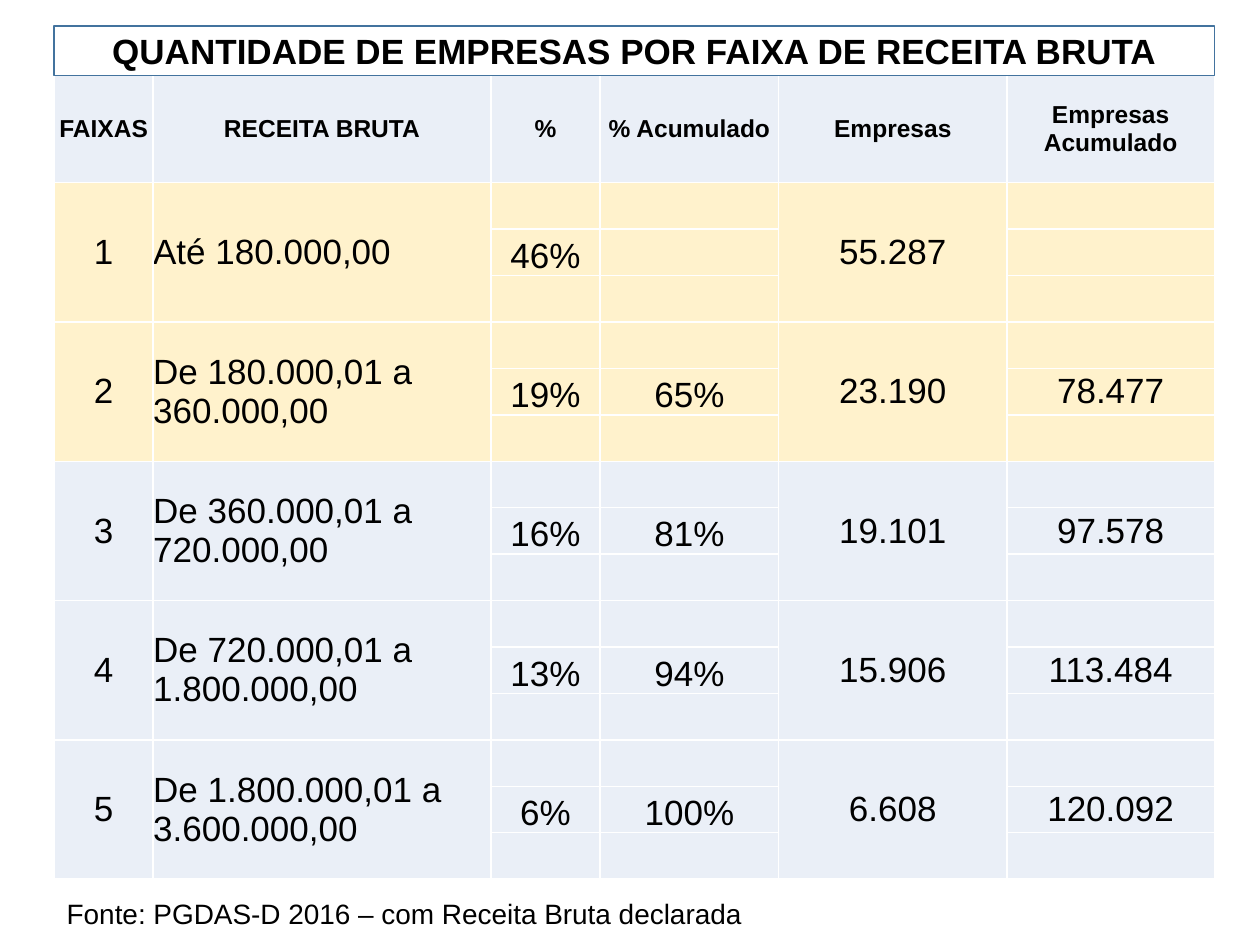
"""Build the slide with the number of companies per gross revenue band."""
from dataclasses import dataclass

from lxml.etree import SubElement
from pptx import Presentation
from pptx.dml.color import RGBColor as RGB
from pptx.enum.shapes import MSO_SHAPE as SHAPE
from pptx.enum.text import MSO_ANCHOR as ANCHOR, MSO_AUTO_SIZE as AUTO, PP_ALIGN as ALIGN
from pptx.oxml.ns import qn
from pptx.util import Pt


@dataclass(frozen=True)
class Theme:
    font: str = "Arial"
    ink: str = "000000"
    paper: str = "FFFFFF"
    outline: str = "43739E"
    plain: str = "EAEFF7"
    accent: str = "FFF2CC"
    header: float = 14
    body: float = 20
    source: float = 16


@dataclass(frozen=True)
class Band:
    number: str
    revenue: str
    share: str
    share_total: str
    companies: str
    companies_total: str
    fill: str


THEME = Theme()
LEFT, WIDTH = 31, 663
TABLE_TOP, HEADER_H, ROW_H = 43.2, 61.2, 26.55
ROWS_PER_BAND = 3
COLUMNS = (56.5, 193, 62.5, 102, 130.5, 118.5)
HEADERS = ("FAIXAS", "RECEITA BRUTA", "%", "% Acumulado", "Empresas", "Empresas\nAcumulado")
MERGED = (0, 1, 4)
PERCENT = (2, 3)
BANDS = (
    Band("1", "Até 180.000,00", "46%", "", "55.287", "", THEME.accent),
    Band("2", "De 180.000,01 a 360.000,00", "19%", "65%", "23.190", "78.477", THEME.accent),
    Band("3", "De 360.000,01 a 720.000,00", "16%", "81%", "19.101", "97.578", THEME.plain),
    Band("4", "De 720.000,01 a 1.800.000,00", "13%", "94%", "15.906", "113.484", THEME.plain),
    Band("5", "De 1.800.000,01 a 3.600.000,00", "6%", "100%", "6.608", "120.092", THEME.plain),
)


def write(tf, text: str, size: float, bold: bool = False, align=ALIGN.CENTER) -> None:
    for i, line in enumerate(text.split("\n")):
        p = tf.add_paragraph() if i else tf.paragraphs[0]
        p.alignment = align
        r = p.add_run()
        r.text = line
        r.font.name, r.font.size, r.font.bold = THEME.font, Pt(size), bold
        r.font.color.rgb = RGB.from_string(THEME.ink)


def style_cell(cell, fill: str) -> None:
    cell.margin_left = cell.margin_right = cell.margin_top = cell.margin_bottom = 0
    cell.vertical_anchor = ANCHOR.MIDDLE
    tc_pr = cell._tc.get_or_add_tcPr()
    for side in ("lnL", "lnR", "lnT", "lnB"):
        ln = SubElement(tc_pr, qn(f"a:{side}"), w=str(Pt(1)))
        SubElement(SubElement(ln, qn("a:solidFill")), qn("a:srgbClr"), val=THEME.paper)
    cell.fill.solid()
    cell.fill.fore_color.rgb = RGB.from_string(fill)


def draw_band(table, top: int, band: Band) -> None:
    values = (band.number, band.revenue, band.share, band.share_total,
              band.companies, band.companies_total)
    for col, value in enumerate(values):
        for row in range(top, top + ROWS_PER_BAND):
            style_cell(table.cell(row, col), band.fill)
        if col in MERGED:
            cell = table.cell(top, col)
            cell.merge(table.cell(top + ROWS_PER_BAND - 1, col))
        else:
            cell = table.cell(top + 1, col)
        if col in PERCENT:
            cell.vertical_anchor = ANCHOR.BOTTOM
        if value:
            write(cell.text_frame, value, THEME.body, align=ALIGN.LEFT if col == 1 else ALIGN.CENTER)


def draw_table(s) -> None:
    count = len(BANDS) * ROWS_PER_BAND
    frame = s.shapes.add_table(count + 1, len(COLUMNS), Pt(LEFT), Pt(TABLE_TOP),
                               Pt(WIDTH), Pt(HEADER_H + count * ROW_H))
    table = frame.table
    table.first_row = table.horz_banding = False
    for column, width in zip(table.columns, COLUMNS):
        column.width = Pt(width)
    for i, row in enumerate(table.rows):
        row.height = Pt(ROW_H if i else HEADER_H)
    for col, label in enumerate(HEADERS):
        cell = table.cell(0, col)
        style_cell(cell, THEME.plain)
        write(cell.text_frame, label, THEME.header, bold=True)
    for i, band in enumerate(BANDS):
        draw_band(table, 1 + i * ROWS_PER_BAND, band)


def draw_title(s, text: str) -> None:
    sp = s.shapes.add_shape(SHAPE.RECTANGLE, Pt(LEFT), Pt(15), Pt(WIDTH), Pt(28.2))
    sp.shadow.inherit = False
    sp.fill.solid()
    sp.fill.fore_color.rgb = RGB.from_string(THEME.paper)
    sp.line.color.rgb = RGB.from_string(THEME.outline)
    sp.line.width = Pt(1)
    tf = sp.text_frame
    tf.word_wrap = True
    tf.vertical_anchor = ANCHOR.MIDDLE
    write(tf, text, THEME.body, bold=True)


def draw_source(s, text: str) -> None:
    tf = s.shapes.add_textbox(Pt(LEFT), Pt(509), Pt(402.5), Pt(26.6)).text_frame
    tf.word_wrap = True
    tf.auto_size = AUTO.SHAPE_TO_FIT_TEXT
    write(tf, text, THEME.source, align=ALIGN.LEFT)


def main() -> None:
    prs = Presentation()
    prs.slide_width, prs.slide_height = Pt(720), Pt(540)
    s = prs.slides.add_slide(prs.slide_layouts[6])
    draw_table(s)
    draw_title(s, "QUANTIDADE DE EMPRESAS POR FAIXA DE RECEITA BRUTA")
    draw_source(s, "Fonte: PGDAS-D 2016 – com Receita Bruta declarada")
    prs.save("out.pptx")


if __name__ == "__main__":
    main()
